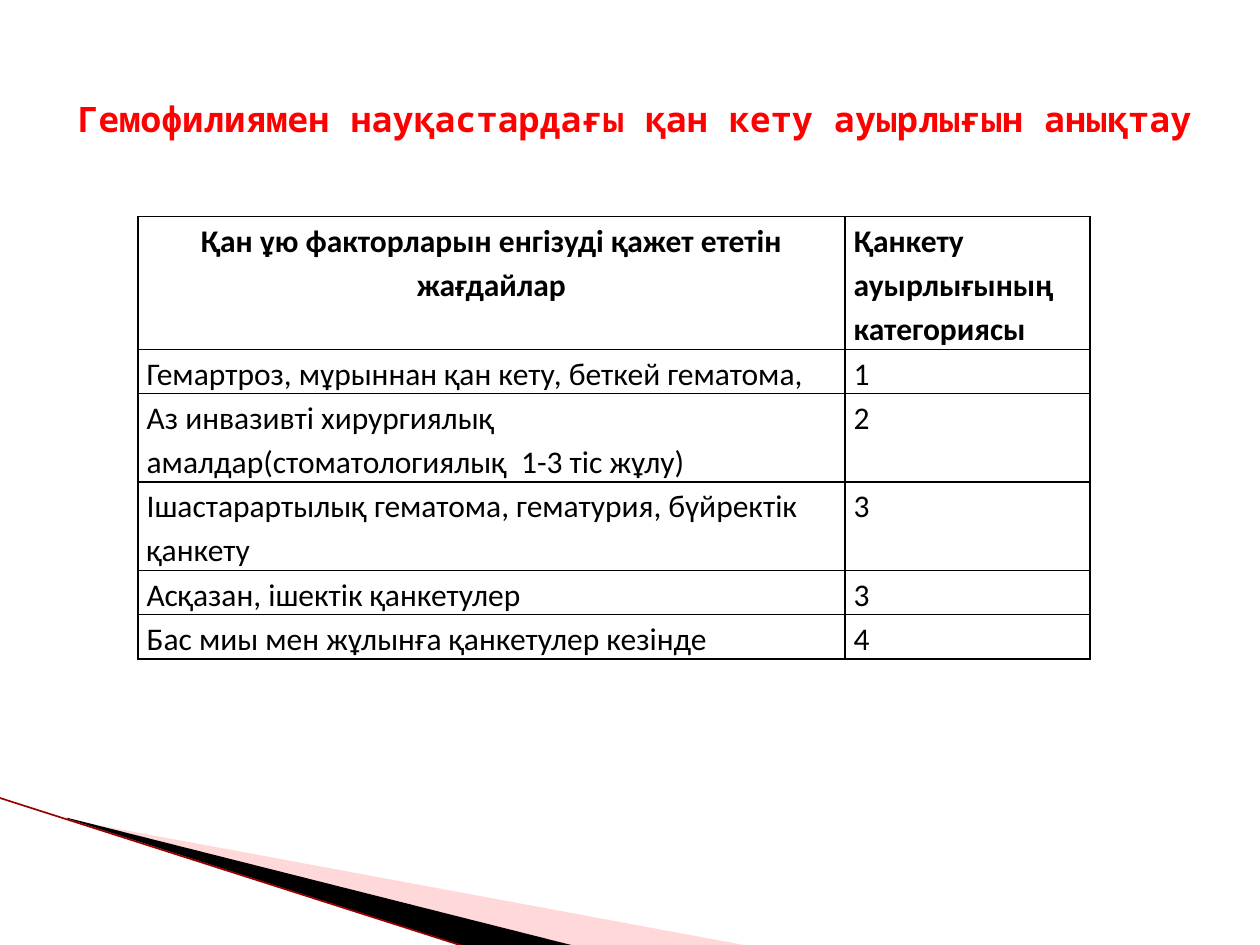
import pptx
import pptx.dml.color
import pptx.enum.shapes
import pptx.enum.text
import pptx.oxml
import pptx.oxml.ns
import pptx.util

Pt = pptx.util.Pt
RGBColor = pptx.dml.color.RGBColor
ALIGN = pptx.enum.text.PP_ALIGN
ANCHOR = pptx.enum.text.MSO_ANCHOR

RED = RGBColor(0xFF, 0x00, 0x00)
DARK_RED = RGBColor(0x99, 0x00, 0x00)
PINK = RGBColor(0xFF, 0xA2, 0xA2)
BLACK = RGBColor(0x00, 0x00, 0x00)
NAMESPACE = pptx.oxml.ns.nsdecls("a")


def write_text(frame, text, font="Calibri", size=18, color=BLACK, bold=False,
               align=ALIGN.LEFT, spacing=1.0):
    frame.word_wrap = True
    para = frame.paragraphs[0]
    para.alignment = align
    para.line_spacing = spacing
    para.space_before = Pt(0)
    span = para.add_run()
    span.text = text
    span.font.name = font
    span.font.size = Pt(size)
    span.font.bold = bold
    span.font.color.rgb = color


deck = pptx.Presentation()
deck.slide_width = Pt(720)
deck.slide_height = Pt(540)
page = deck.slides.add_slide(deck.slide_layouts[5])

# Corner wedges, bleeding off the bottom edge
wedges = [
    (PINK, 40, [(39.6, 468.5), (428.4, 540.6), (328.4, 540.6), (39.6, 468)]),
    (BLACK, 100, [(38.2, 467.3), (329, 540.7), (267.8, 541.4), (38.9, 468)]),
]
for color, opacity, points in wedges:
    corners = [(Pt(x), Pt(y)) for x, y in points]
    builder = page.shapes.build_freeform(*corners[0])
    builder.add_line_segments(corners[1:], close=True)
    wedge = builder.convert_to_shape()
    wedge.shadow.inherit = False
    wedge.fill.solid()
    wedge.fill.fore_color.rgb = color
    wedge.line.fill.background()
    if opacity < 100:
        tint = wedge.fill._xPr.find(".//" + pptx.oxml.ns.qn("a:srgbClr"))
        tint.append(pptx.oxml.parse_xml(
            f'<a:alpha {NAMESPACE} val="{opacity * 1000}"/>'))

# Thin line along the wedges
edge = page.shapes.add_connector(pptx.enum.shapes.MSO_CONNECTOR.STRAIGHT,
                                 Pt(-0.7), Pt(455.8), Pt(267.1), Pt(541.4))
edge.line.color.rgb = DARK_RED
edge.line.width = Pt(0.95)
edge._element.spPr.append(pptx.oxml.parse_xml(f"<a:effectLst {NAMESPACE}/>"))

# Title
title = page.shapes.title
title.left, title.top, title.width, title.height = Pt(28), Pt(39.6), Pt(669.6), Pt(56)
title.text_frame.vertical_anchor = ANCHOR.MIDDLE
write_text(title.text_frame, "Гемофилиямен науқастардағы қан кету ауырлығын анықтау",
           font="Noto Sans Mono", size=20, color=RED, bold=True, align=ALIGN.CENTER)

# Table of bleeding severity: text, category, lines of text in the row
rows = [
    ("Қан ұю факторларын енгізуді қажет ететін жағдайлар",
     "Қанкету ауырлығының категориясы", 3),
    ("Гемартроз, мұрыннан қан кету, беткей гематома,", "1", 1),
    ("Аз инвазивті хирургиялық амалдар(стоматологиялық  1-3 тіс жұлу)", "2", 2),
    ("Ішастарартылық гематома, гематурия, бүйректік қанкету", "3", 2),
    ("Асқазан, ішектік қанкетулер", "3", 1),
    ("Бас миы мен жұлынға қанкетулер кезінде", "4", 1),
]
LINE_HEIGHT = 25
table = page.shapes.add_table(len(rows), 2, Pt(78.8), Pt(123.8), Pt(544), Pt(250)).table
table.first_row = False
table.horz_banding = False
table.columns[0].width = Pt(404)
table.columns[1].width = Pt(140)

for r, (condition, category, lines) in enumerate(rows):
    table.rows[r].height = Pt(lines * LINE_HEIGHT)
    for c, text in enumerate((condition, category)):
        cell = table.cell(r, c)
        cell.fill.background()
        cell.margin_left = cell.margin_right = Pt(5)
        cell.margin_top = cell.margin_bottom = Pt(0)
        cell.vertical_anchor = ANCHOR.TOP
        write_text(cell.text_frame, text, bold=r == 0, spacing=1.15,
                   align=ALIGN.CENTER if r == c == 0 else ALIGN.LEFT)
        properties = cell._tc.get_or_add_tcPr()
        for position, side in enumerate(("lnL", "lnR", "lnT", "lnB")):
            properties.insert(position, pptx.oxml.parse_xml(
                f'<a:{side} {NAMESPACE} w="{Pt(1)}"><a:solidFill>'
                f'<a:srgbClr val="{BLACK}"/></a:solidFill></a:{side}>'))

deck.save("out.pptx")
